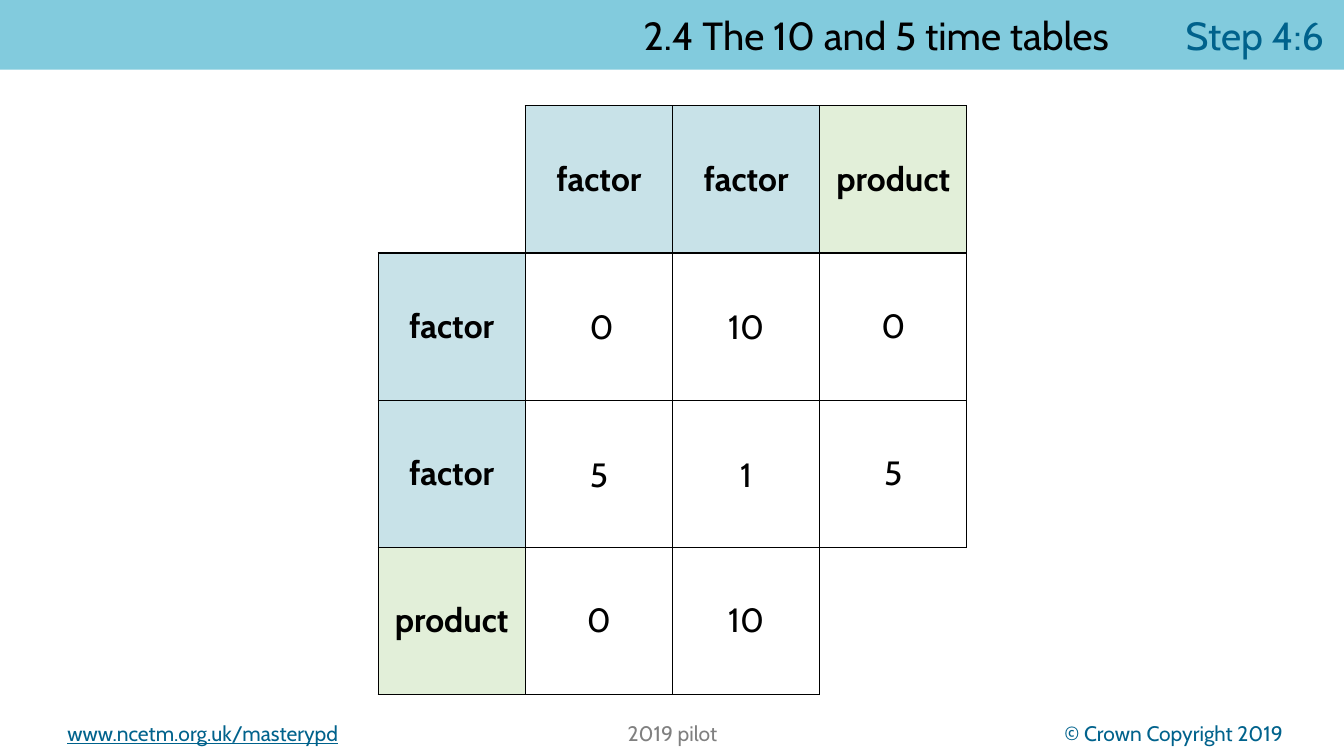
from lxml import etree
from pptx import Presentation
from pptx import util as u
from pptx.dml.color import RGBColor
from pptx.enum import text
from pptx.oxml.ns import qn

HUES = {"band": "82CBDD", "ink": "000000", "link": "00628C", "grey": "808080",
        "factor": "C8E2E8", "product": "E2EFD9"}
FONT = "Cabin"
CELL = 1.46
GRID = [["", "factor", "factor", "product"],
        ["factor", "0", "10", "0"],
        ["factor", "5", "1", "5"],
        ["product", "0", "10", ""]]
INNER = (1, 2)  # rows and columns whose crossings hold loose numbers
ALIGN = text.PP_ALIGN


def hue(name):
    return RGBColor.from_string(HUES[name])


def style(run, size, name="ink", bold=False):
    font = run.font
    font.name, font.size, font.bold = FONT, u.Pt(size), bold
    font.color.rgb = hue(name)


def label(slide, words, box, size, name="ink", align=ALIGN.CENTER, wrap=True):
    """Place a text box of one line and return its run."""
    frame = slide.shapes.add_textbox(*map(u.Inches, box)).text_frame
    frame.word_wrap = wrap
    frame.text = words
    line = frame.paragraphs[0]
    line.alignment = align
    style(line.runs[0], size, name)
    return line.runs[0]


def banner(slide, box):
    title = slide.shapes.title
    title.left, title.top, title.width, title.height = map(u.Inches, box)
    title.fill.solid()
    title.fill.fore_color.rgb = hue("band")
    frame = title.text_frame
    frame.auto_size = text.MSO_AUTO_SIZE.NONE
    frame.vertical_anchor = text.MSO_ANCHOR.MIDDLE
    frame.margin_left = frame.margin_right = u.Inches(0.2)
    frame.margin_top = frame.margin_bottom = u.Inches(0.05)
    frame.text = "2.4 The 10 and 5 time tables\t"
    line = frame.paragraphs[0]
    line.alignment = ALIGN.RIGHT
    props = line._p.get_or_add_pPr()
    for key, size in (("marL", 0.38), ("indent", -0.38), ("defTabSz", 1)):
        props.set(key, str(u.Inches(size)))
    line.add_run().text = "Step 4:6"
    for run, name in zip(line.runs, ("ink", "link")):
        style(run, 28, name)


def border(cell, sides):
    """Draw the given sides in black and clear the others."""
    props = cell._tc.get_or_add_tcPr()
    for spot, side in enumerate("LRTB"):
        edge = etree.Element(qn(f"a:ln{side}"), w=str(u.Pt(1)))
        if side in sides:
            fill = etree.SubElement(edge, qn("a:solidFill"))
            etree.SubElement(fill, qn("a:srgbClr"), val=HUES["ink"])
        else:
            etree.SubElement(edge, qn("a:noFill"))
        props.insert(spot, edge)


def grid(slide, left, top):
    count = len(GRID)
    side = u.Inches(CELL * count)
    table = slide.shapes.add_table(count, count, u.Inches(left), u.Inches(top),
                                   side, side).table
    table.first_row = table.horz_banding = False
    for part in (*table.rows, *table.columns):
        if part in table.rows:
            part.height = u.Inches(CELL)
        else:
            part.width = u.Inches(CELL)
    corners = {(0, 0): "RB", (count - 1, count - 1): "LT"}
    for row, words in enumerate(GRID):
        for col, word in enumerate(words):
            cell = table.cell(row, col)
            cell.vertical_anchor = text.MSO_ANCHOR.MIDDLE
            if word in HUES:
                cell.fill.solid()
                cell.fill.fore_color.rgb = hue(word)
            else:
                cell.fill.background()
            border(cell, corners.get((row, col), "LRTB"))
            if row in INNER and col in INNER:
                wide = 0.19 + 0.19 * len(word)
                box = (left + CELL * (col + 0.5) - wide / 2,
                       top + CELL * (row + 0.5) - 0.25, wide, 0.5)
                label(slide, word, box, 24, wrap=False)
            elif word:
                cell.text = word
                line = cell.text_frame.paragraphs[0]
                line.alignment = ALIGN.CENTER
                style(line.runs[0], 24, bold=word in HUES)


def footer(slide, top):
    def note(words, left, name, align):
        return label(slide, words, (left, top, 4.1, 0.35), 15, name, align)

    site = note("www.ncetm.org.uk/masterypd", 0.57, "link", ALIGN.LEFT)
    site.font.underline = True
    note("2019 pilot", 4.62, "grey", ALIGN.CENTER)
    note("© Crown Copyright 2019\u00a0", 8.77, "link", ALIGN.RIGHT)


def main():
    deck = Presentation()
    deck.slide_width, deck.slide_height = u.Inches(13.33), u.Inches(7.5)
    slide = deck.slides.add_slide(deck.slide_layouts[5])
    banner(slide, (0, 0, 13.33, 0.69))
    grid(slide, 3.75, 1.05)
    footer(slide, 7.1)
    deck.save("out.pptx")


if __name__ == "__main__":
    main()
